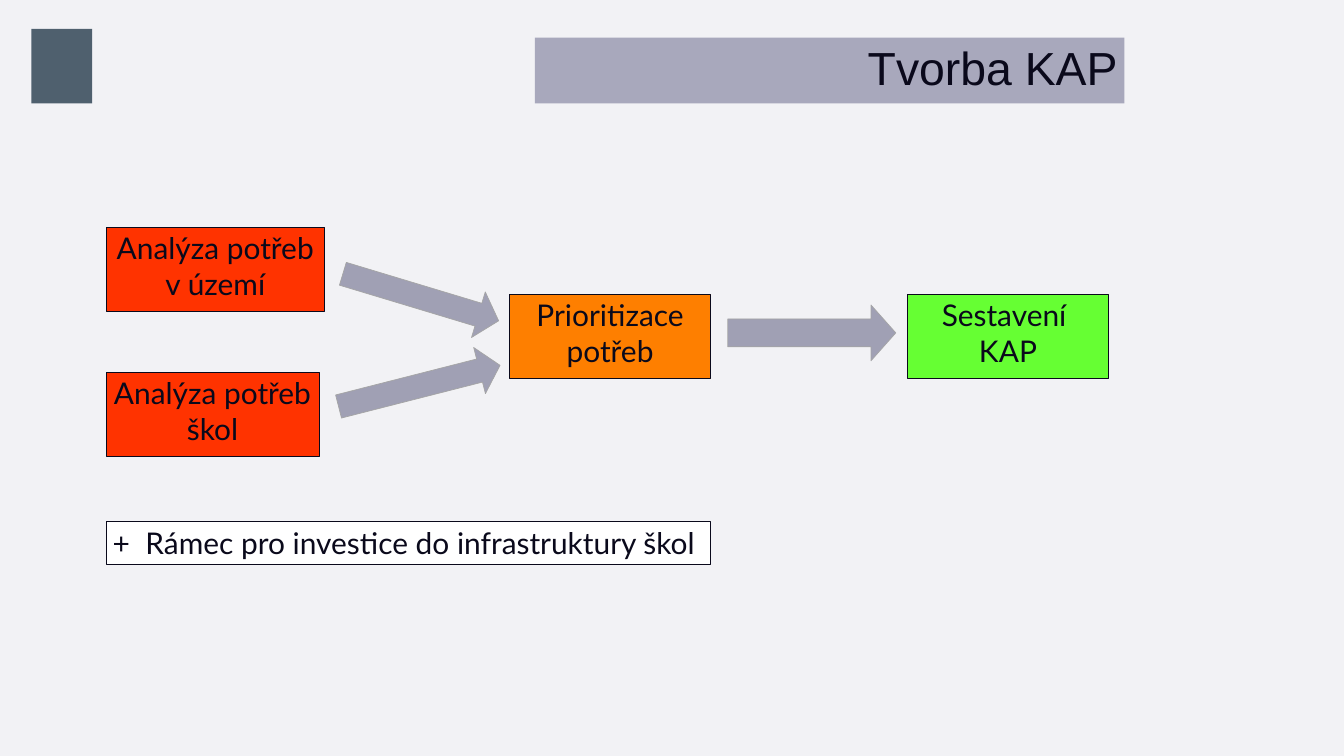
"""Build the slide that shows how the KAP plan is made."""
import lxml.etree
import pptx
import pptx.dml.color
import pptx.enum.shapes
import pptx.enum.text
import pptx.oxml.ns
import pptx.util

Cm = pptx.util.Cm
Pt = pptx.util.Pt
Shapes = pptx.enum.shapes.MSO_SHAPE
Align = pptx.enum.text.PP_ALIGN
Anchor = pptx.enum.text.MSO_ANCHOR

COLOURS = {
    "background": "F2F2F5", "ink": "0A091B", "title": "A8A8BC", "logo": "4F606E",
    "need": "FF3300", "priority": "FE7F00", "plan": "66FF33", "note": "FFFFFF",
    "arrow": "6A6A8A", "arrow line": "A5A5A5",
}
LEFT, MIDDLE_TOP, BOX_WIDTH, BOX_HEIGHT = 4.01, 11.13, 7.62, 3.18
BOX_FRAME = {
    "word_wrap": True, "vertical_anchor": Anchor.TOP, "margin_left": 0,
    "margin_right": 0, "margin_top": Cm(0.1), "margin_bottom": Cm(0.03),
}
NOTE_FRAME = {"word_wrap": True, "vertical_anchor": Anchor.TOP}
TITLE_FRAME = {
    "word_wrap": True, "vertical_anchor": Anchor.MIDDLE,
    "auto_size": pptx.enum.text.MSO_AUTO_SIZE.NONE,
}


def colour(name):
    """Return the named colour as an RGB value."""
    return pptx.dml.color.RGBColor.from_string(COLOURS[name])


def set_values(target, values):
    """Set each attribute of the target from a dict."""
    for name, value in values.items():
        setattr(target, name, value)


def paint(shape, fill, line=None, width=0.75):
    """Give a shape its fill and its outline."""
    shape.fill.solid()
    shape.fill.fore_color.rgb = colour(fill)
    if line:
        shape.line.color.rgb = colour(line)
        shape.line.width = Pt(width)
    else:
        shape.line.fill.background()


def write(shape, lines, frame_format, paragraph_format, size=32, font="Lato"):
    """Write one paragraph for each line of text."""
    frame = shape.text_frame
    set_values(frame, frame_format)
    frame.text = "\n".join(lines)
    font_format = {"name": font, "size": Pt(size)}
    for paragraph in frame.paragraphs:
        set_values(paragraph, paragraph_format)
        for run in paragraph.runs:
            set_values(run.font, font_format)
            run.font.color.rgb = colour("ink")


def add_block(slide, kind, bounds, fill, line=None, width=0.75):
    """Add a painted preset shape without a shadow."""
    shape = slide.shapes.add_shape(kind, *(Cm(length) for length in bounds))
    shape.shadow.inherit = False
    paint(shape, fill, line, width)
    return shape


def add_title(slide, text):
    """Place and format the title placeholder."""
    title = slide.shapes.title
    bounds = {"left": 20.22, "top": 1.42, "width": 22.28, "height": 2.49}
    set_values(title, {name: Cm(length) for name, length in bounds.items()})
    paint(title, "title")
    paragraph_format = {"alignment": Align.RIGHT, "line_spacing": 0.9}
    write(title, [text], TITLE_FRAME, paragraph_format, 49.7, "Arial")


def add_step(slide, bounds, fill, lines, width=0.75):
    """Add a step of the process as a box with centred text."""
    box = add_block(slide, Shapes.RECTANGLE, bounds, fill, "ink", width)
    write(box, lines, BOX_FRAME, {"alignment": Align.CENTER})


def add_arrow(slide, bounds, rotation=0):
    """Add a translucent block arrow."""
    arrow = add_block(slide, Shapes.RIGHT_ARROW, bounds, "arrow", "arrow line")
    arrow.adjustments[1] = 0.444
    arrow.rotation = rotation
    fill_colour = arrow.fill._xPr.find(".//" + pptx.oxml.ns.qn("a:srgbClr"))
    lxml.etree.SubElement(fill_colour, pptx.oxml.ns.qn("a:alpha"), val="60000")


def add_note(slide, bounds, text):
    """Add the note, with a tab stop after its plus sign."""
    note = add_block(slide, Shapes.RECTANGLE, bounds, "note", "ink")
    paragraph_format = {"alignment": Align.LEFT, "space_before": Pt(6)}
    write(note, [text], NOTE_FRAME, paragraph_format)
    properties = note.text_frame.paragraphs[0]._p.get_or_add_pPr()
    tabs = lxml.etree.SubElement(properties, pptx.oxml.ns.qn("a:tabLst"))
    lxml.etree.SubElement(
        tabs, pptx.oxml.ns.qn("a:tab"), pos=str(Cm(1.24)), algn="l")


def main():
    """Build and save the presentation."""
    presentation = pptx.Presentation()
    presentation.slide_width = Cm(50.8)
    presentation.slide_height = Cm(28.58)
    slide = presentation.slides.add_slide(presentation.slide_layouts[5])
    slide.background.fill.solid()
    slide.background.fill.fore_color.rgb = colour("background")

    add_block(slide, Shapes.RECTANGLE, (1.19, 1.09, 2.29, 2.82), "logo")
    add_title(slide, "Tvorba KAP")
    add_step(slide, (LEFT, 8.59, 8.26, BOX_HEIGHT), "need",
             ["Analýza potřeb v území"], 1)
    add_step(slide, (LEFT, 14.07, 8.05, BOX_HEIGHT), "need",
             ["Analýza potřeb škol"])
    add_step(slide, (19.25, MIDDLE_TOP, BOX_WIDTH, BOX_HEIGHT), "priority",
             ["Prioritizace potřeb"])
    add_step(slide, (34.29, MIDDLE_TOP, BOX_WIDTH, BOX_HEIGHT), "plan",
             ["Sestavení ", "KAP"])
    add_arrow(slide, (12.83, 10.34, 6.15, 1.8), 16.8)
    add_arrow(slide, (12.7, 13.69, 6.3, 1.8), -14.3)
    add_arrow(slide, (27.51, 11.53, 6.35, 2.11))
    add_note(slide, (LEFT, 19.71, 22.86, 1.63),
             "+\tRámec pro investice do infrastruktury škol")
    presentation.save("out.pptx")


if __name__ == "__main__":
    main()
